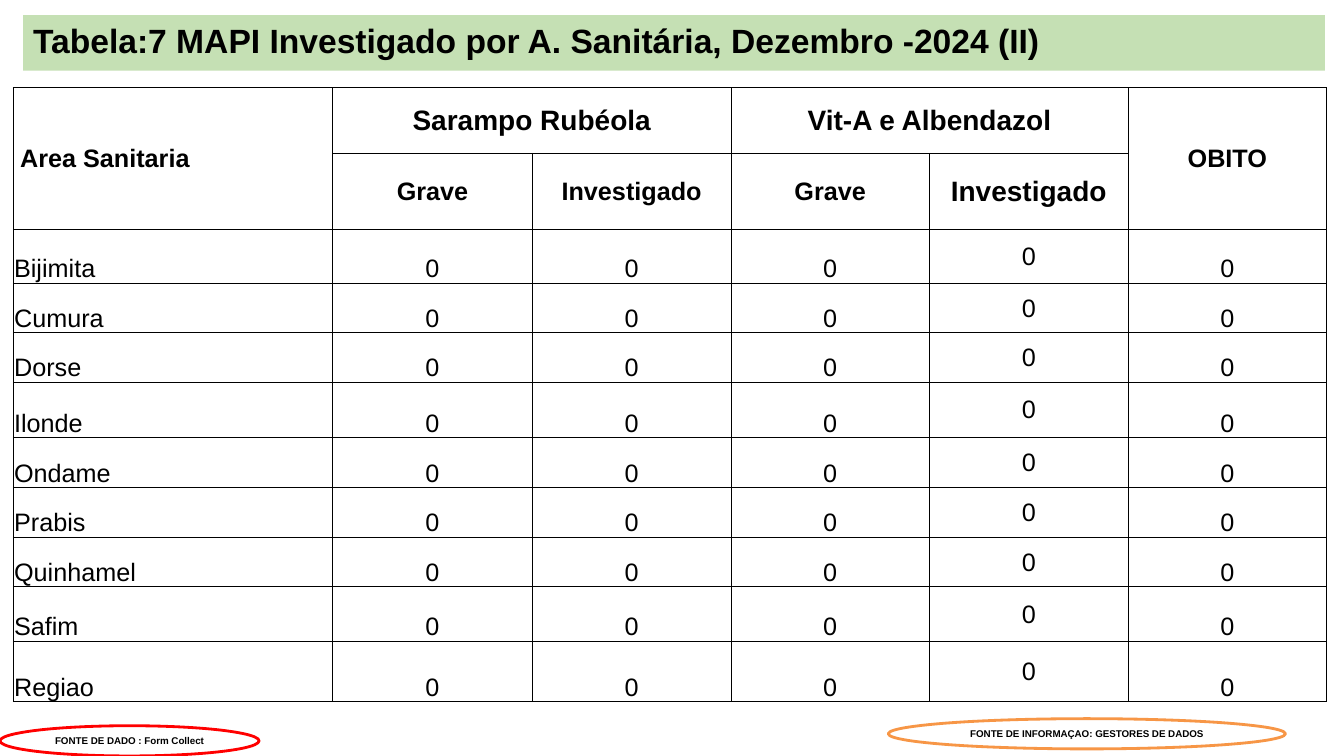
import pptx
import pptx.dml.color
import pptx.enum.shapes
import pptx.enum.text
import pptx.oxml
import pptx.oxml.ns
import pptx.util

Inches = pptx.util.Inches
Pt = pptx.util.Pt
RGBColor = pptx.dml.color.RGBColor
Shapes = pptx.enum.shapes.MSO_SHAPE
Align = pptx.enum.text.PP_ALIGN
Anchor = pptx.enum.text.MSO_ANCHOR

BLACK = RGBColor(0, 0, 0)
WHITE = RGBColor(255, 255, 255)
GREEN = RGBColor(0xC5, 0xE0, 0xB4)
RED = RGBColor(255, 0, 0)
ORANGE = RGBColor(0xF7, 0x96, 0x46)

TITLE = "Tabela:7 MAPI Investigado por A. Sanitária, Dezembro -2024 (II)"
HEADERS = [
    (0, 0, 2, 1, " Area Sanitaria", 18),
    (0, 1, 1, 2, "Sarampo Rubéola", 20),
    (0, 3, 1, 2, "Vit-A e Albendazol", 20),
    (0, 5, 2, 1, "OBITO", 18),
    (1, 1, 1, 1, "Grave", 18),
    (1, 2, 1, 1, "Investigado", 18),
    (1, 3, 1, 1, "Grave", 18),
    (1, 4, 1, 1, "Investigado", 20),
]
HEADER_ROWS = 2
CENTERED_COLUMN = 4
AREAS = [
    ("Bijimita", 0, 0, 0, 0, 0),
    ("Cumura", 0, 0, 0, 0, 0),
    ("Dorse", 0, 0, 0, 0, 0),
    ("Ilonde", 0, 0, 0, 0, 0),
    ("Ondame", 0, 0, 0, 0, 0),
    ("Prabis", 0, 0, 0, 0, 0),
    ("Quinhamel", 0, 0, 0, 0, 0),
    ("Safim", 0, 0, 0, 0, 0),
    ("Regiao", 0, 0, 0, 0, 0),
]
COLUMN_WIDTHS = [3.17, 1.98, 1.97, 1.97, 1.97, 1.97]
ROW_HEIGHTS = [0.65, 0.75, 0.54, 0.49, 0.49, 0.55, 0.5, 0.49, 0.49, 0.54, 0.6]
SOURCES = [
    ("FONTE DE DADO : Form Collect", (0, 7.2, 2.57, 0.3), None, RED),
    ("FONTE DE INFORMAÇAO: GESTORES DE DADOS", (8.81, 7.13, 3.94, 0.3), WHITE, ORANGE),
]
CELL_FORMAT = {
    "margin_left": Inches(0.01),
    "margin_right": Inches(0.01),
    "margin_top": Inches(0.01),
    "margin_bottom": 0,
}


def apply_format(target, values):
    for name, value in values.items():
        setattr(target, name, value)


def write_text(frame, text, size, bold, alignment):
    paragraph = frame.paragraphs[0]
    paragraph.alignment = alignment
    run = paragraph.add_run()
    run.text = text
    apply_format(run.font, {"name": "Arial", "size": Pt(size), "bold": bold})
    run.font.color.rgb = BLACK
    return paragraph


def add_box(slide, kind, box, fill, line):
    shape = slide.shapes.add_shape(kind, *map(Inches, box))
    shape.shadow.inherit = False
    if fill is None:
        shape.fill.background()
    else:
        shape.fill.solid()
        shape.fill.fore_color.rgb = fill
    if line is None:
        shape.line.fill.background()
    else:
        shape.line.color.rgb = line
        shape.line.width = Pt(2)
    apply_format(shape.text_frame, {"word_wrap": True, "vertical_anchor": Anchor.MIDDLE})
    return shape


def add_borders(cell):
    properties = cell._tc.get_or_add_tcPr()
    for position, side in enumerate(("lnL", "lnR", "lnT", "lnB")):
        border = pptx.oxml.parse_xml(
            f'<a:{side} {pptx.oxml.ns.nsdecls("a")} w="{Pt(0.5)}">'
            f'<a:solidFill><a:srgbClr val="{BLACK}"/></a:solidFill></a:{side}>'
        )
        properties.insert(position, border)


def add_area_table(slide):
    table = slide.shapes.add_table(
        len(ROW_HEIGHTS), len(COLUMN_WIDTHS), Inches(0.13), Inches(0.87),
        Inches(sum(COLUMN_WIDTHS)), Inches(sum(ROW_HEIGHTS)),
    ).table
    apply_format(table, {"first_row": False, "horz_banding": False})
    for column, width in zip(table.columns, COLUMN_WIDTHS):
        column.width = Inches(width)
    for row, height in zip(table.rows, ROW_HEIGHTS):
        row.height = Inches(height)
    for cell in table.iter_cells():
        apply_format(cell, CELL_FORMAT)
        cell.fill.solid()
        cell.fill.fore_color.rgb = WHITE
        add_borders(cell)

    for row, column, row_span, column_span, text, size in HEADERS:
        cell = table.cell(row, column)
        if row_span * column_span > 1:
            cell.merge(table.cell(row + row_span - 1, column + column_span - 1))
        cell.vertical_anchor = Anchor.MIDDLE
        write_text(cell.text_frame, text, size, True, Align.CENTER if column else Align.LEFT)

    for row, values in enumerate(AREAS, HEADER_ROWS):
        for column, value in enumerate(values):
            cell = table.cell(row, column)
            cell.vertical_anchor = Anchor.MIDDLE if column == CENTERED_COLUMN else Anchor.BOTTOM
            alignment = Align.CENTER if column else Align.LEFT
            write_text(cell.text_frame, str(value), 18, False, alignment)


def main():
    presentation = pptx.Presentation()
    apply_format(presentation, {"slide_width": Inches(13.33), "slide_height": Inches(7.5)})
    slide = presentation.slides.add_slide(presentation.slide_layouts[6])

    title = add_box(slide, Shapes.RECTANGLE, (0.23, 0.15, 12.91, 0.55), GREEN, None)
    write_text(title.text_frame, TITLE, 24, True, Align.LEFT).line_spacing = 0.9
    add_area_table(slide)
    for text, box, fill, line in SOURCES:
        source = add_box(slide, Shapes.OVAL, box, fill, line)
        write_text(source.text_frame, text, 7, True, Align.CENTER)

    presentation.save("out.pptx")


if __name__ == "__main__":
    main()
